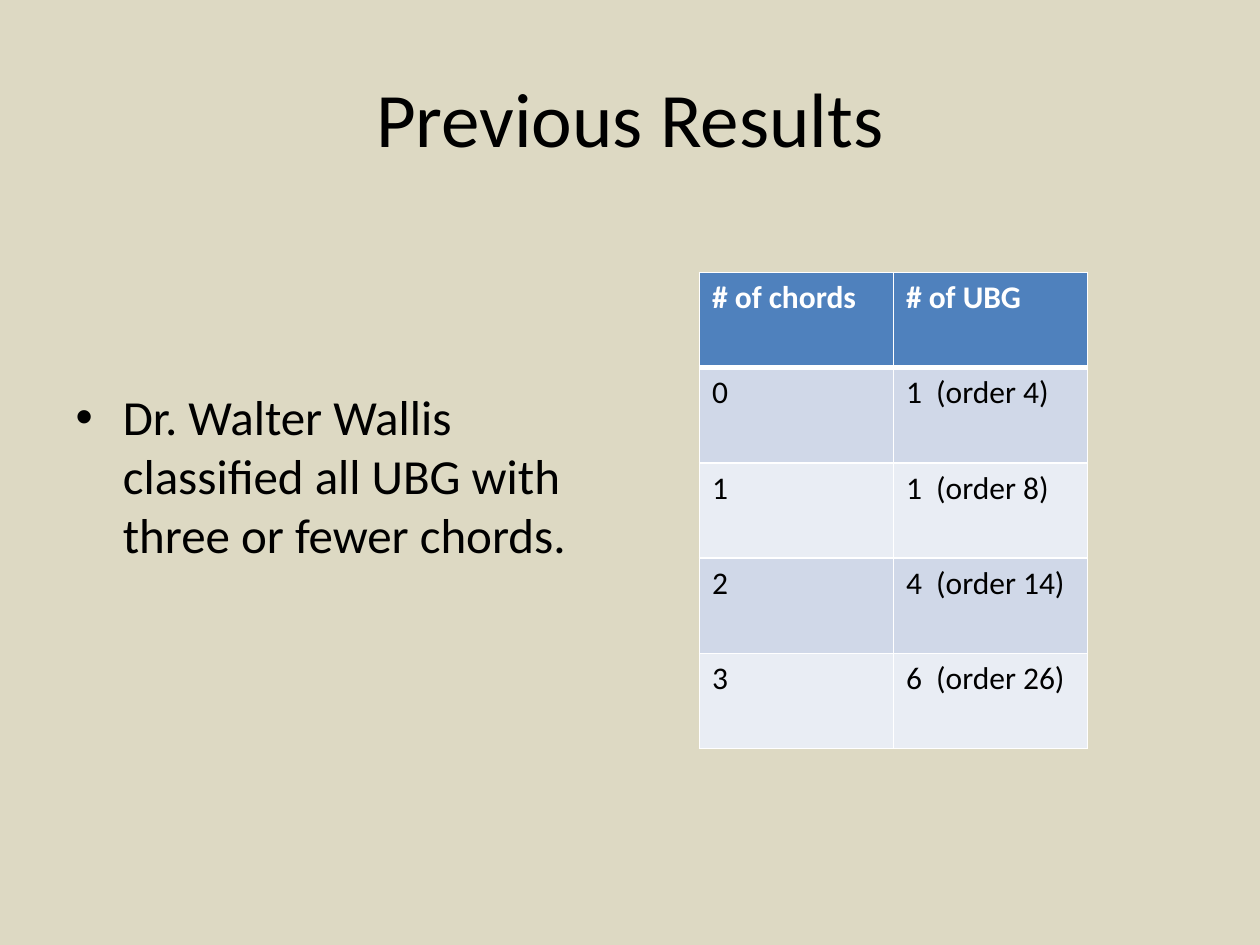
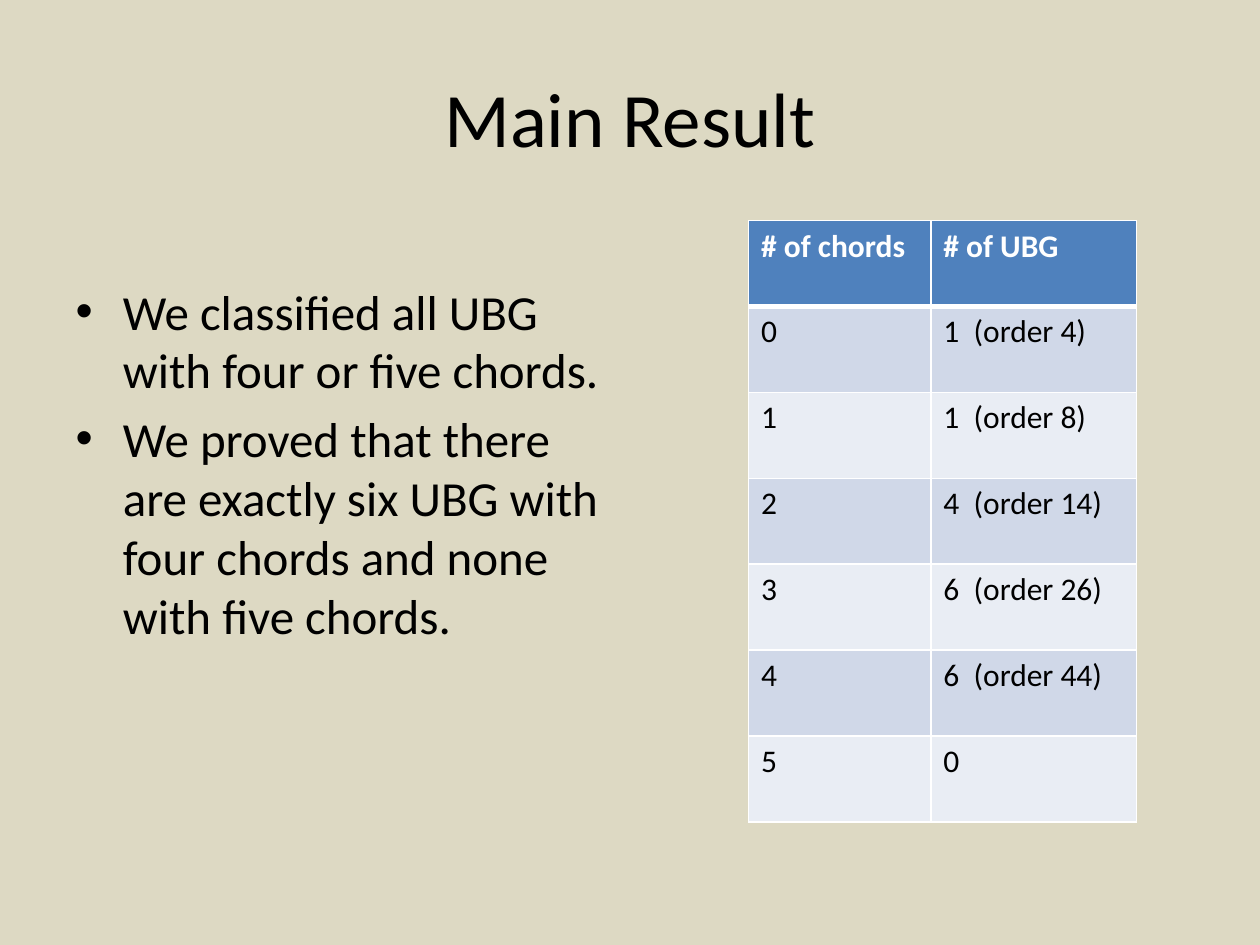
from lxml.etree import SubElement
from pptx import Presentation
from pptx.dml.color import RGBColor
from pptx.enum.text import MSO_ANCHOR, MSO_AUTO_SIZE, PP_ALIGN
from pptx.oxml.ns import qn
from pptx.util import Cm, Pt

SAND = RGBColor(0xDD, 0xD9, 0xC3)
BLACK = RGBColor(0x00, 0x00, 0x00)
WHITE = RGBColor(0xFF, 0xFF, 0xFF)
HEADER_BLUE = RGBColor(0x4F, 0x81, 0xBD)
BAND_DARK = RGBColor(0xD0, 0xD8, 0xE8)
BAND_LIGHT = RGBColor(0xE9, 0xED, 0xF4)
FONT = "Calibri"

TITLE_BOX = (1.27, 0.76, 22.86, 3.18)
HEADINGS = ("# of chords", "# of UBG")
KNOWN_COUNTS = ("1  (order 4)", "1  (order 8)", "4  (order 14)", "6  (order 26)")
NEW_COUNTS = ("6  (order 44)", "0")


def write(frame, text, size=18, color=BLACK, bold=False, align=None):
    frame.text = text
    for paragraph in frame.paragraphs:
        paragraph.alignment = align
        font = paragraph.font
        for run in paragraph.runs:
            font = run.font
            font.name, font.size, font.bold = FONT, Pt(size), bold
            font.color.rgb = color


def place(placeholder, box):
    placeholder.left, placeholder.top, placeholder.width, placeholder.height = map(Cm, box)
    placeholder.text_frame.auto_size = MSO_AUTO_SIZE.NONE


def add_title(slide, text, box):
    heading = slide.shapes.title
    place(heading, box)
    heading.text_frame.vertical_anchor = MSO_ANCHOR.MIDDLE
    write(heading.text_frame, text, size=44, align=PP_ALIGN.CENTER)


def add_findings(slide, findings, box):
    body = slide.placeholders[1]
    place(body, box)
    write(body.text_frame, "\n".join(findings), size=28)


def set_borders(cell, **widths):
    properties = cell._tc.get_or_add_tcPr()
    for side in "LRTB":
        line = SubElement(properties, qn(f"a:ln{side}"), w=str(Pt(widths.get(side, 1))))
        fill = SubElement(line, qn("a:solidFill"))
        SubElement(fill, qn("a:srgbClr"), val=str(WHITE))


def add_counts(slide, counts, box, first_share):
    left, top, width, height = box
    rows = [HEADINGS] + [(str(chords), count) for chords, count in enumerate(counts)]
    table = slide.shapes.add_table(len(rows), len(HEADINGS), *map(Cm, box)).table
    for column, share in zip(table.columns, (first_share, 1 - first_share)):
        column.width = Cm(width * share)
    for r, values in enumerate(rows):
        table.rows[r].height = Cm(height / len(rows))
        header = r == 0
        band = HEADER_BLUE if header else BAND_DARK if r % 2 else BAND_LIGHT
        for c, value in enumerate(values):
            cell = table.cell(r, c)
            set_borders(cell, T=3 if r == 1 else 1, B=3 if header else 1)
            cell.fill.solid()
            cell.fill.fore_color.rgb = band
            write(cell.text_frame, value, color=WHITE if header else BLACK, bold=header)


def add_result_slide(deck, title, findings, findings_box, counts, counts_box, first_share):
    slide = deck.slides.add_slide(deck.slide_layouts[1])
    add_title(slide, title, TITLE_BOX)
    add_findings(slide, findings, findings_box)
    add_counts(slide, counts, counts_box, first_share)


def main():
    deck = Presentation()
    deck.slide_width, deck.slide_height = Cm(25.4), Cm(19.05)
    background = deck.slide_master.background.fill
    background.solid()
    background.fore_color.rgb = SAND

    add_result_slide(
        deck,
        "Previous Results",
        ["Dr. Walter Wallis classified all UBG with three or fewer chords."],
        (1.27, 7.67, 11.23, 9.35),
        KNOWN_COUNTS,
        (14.1, 5.49, 7.82, 9.6),
        0.5,
    )
    add_result_slide(
        deck,
        "Main Result",
        [
            "We classified all UBG with four or five chords.",
            "We proved that there are exactly six UBG with four chords and none with five chords.",
        ],
        (1.27, 5.54, 11.23, 12.57),
        KNOWN_COUNTS + NEW_COUNTS,
        (15.09, 4.45, 7.82, 12.12),
        0.47,
    )
    deck.save("out.pptx")


if __name__ == "__main__":
    main()
